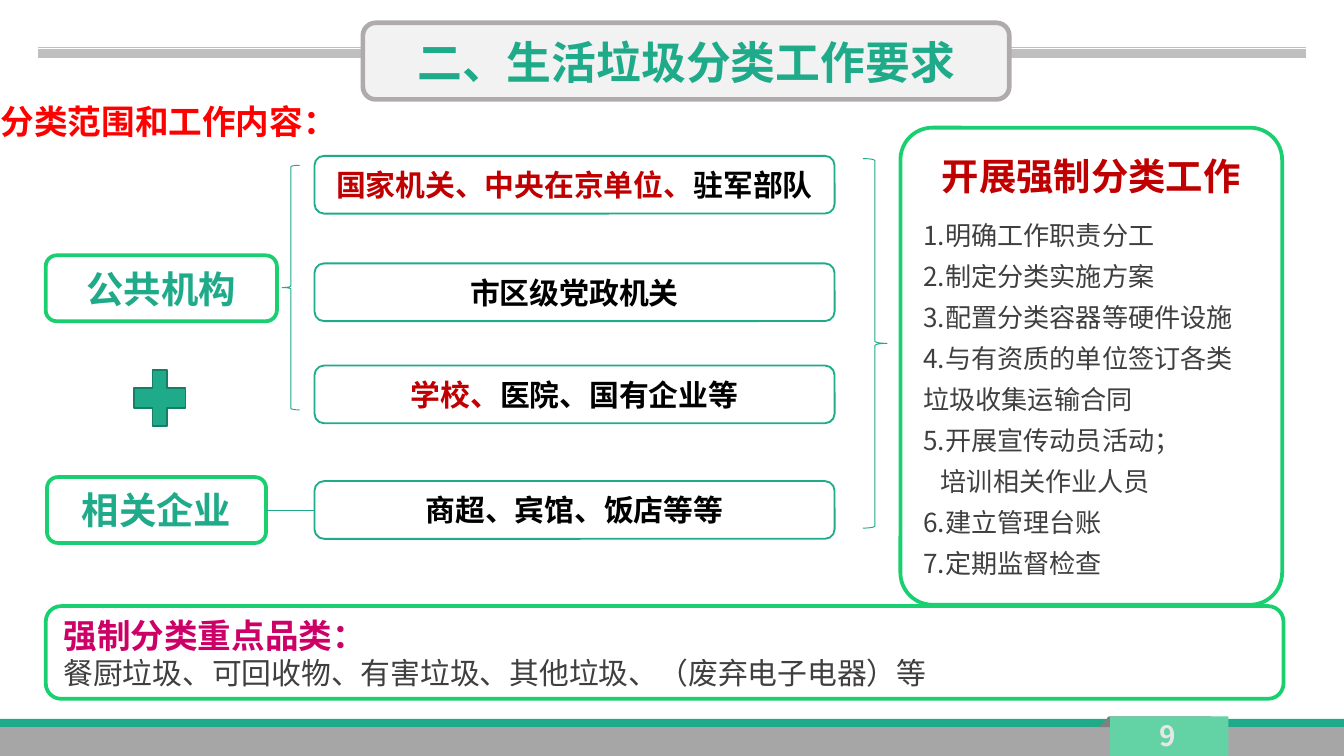
from dataclasses import dataclass

from pptx import Presentation
from pptx.dml.color import RGBColor
from pptx.enum import shapes, text
from pptx.oxml.ns import qn
from pptx.util import Inches, Pt

MSO = shapes.MSO_SHAPE
CENTER, LEFT = text.PP_ALIGN.CENTER, text.PP_ALIGN.LEFT


@dataclass(frozen=True)
class Theme:
    font: str = "Noto Sans CJK SC"
    teal: str = "1FAA89"
    teal_dark: str = "177E65"
    green: str = "1ACF6F"
    mint: str = "63D2A4"
    white: str = "FFFFFF"
    black: str = "000000"
    body: str = "403E3E"
    crimson: str = "C00000"
    red: str = "FF0000"
    magenta: str = "CC0066"
    title_fill: str = "F2F2F2"
    title_line: str = "AFABAB"
    footer: str = "A6A6A6"
    fold: str = "808080"
    rule: str = "BFBFBF"
    number: str = "E7E6E6"
    title_size: int = 24
    label_size: int = 20
    heading_size: int = 18
    text_size: int = 16
    number_size: int = 15
    list_size: int = 14


T = Theme()


def rgb(value):
    return RGBColor.from_string(value)


def paint(sp, fill=None, line=None, width=1):
    if fill:
        sp.fill.solid()
        sp.fill.fore_color.rgb = rgb(fill)
    else:
        sp.fill.background()
    if line:
        sp.line.color.rgb = rgb(line)
        sp.line.width = Pt(width)
    else:
        sp.line.fill.background()


def add_shape(s, kind, box, **style):
    sp = s.shapes.add_shape(kind, *map(Inches, box))
    sp.shadow.inherit = False
    paint(sp, **style)
    return sp


def add_line(s, start, end, color, width):
    line = s.shapes.add_connector(
        shapes.MSO_CONNECTOR.STRAIGHT, *map(Inches, (*start, *end)))
    line.line.color.rgb = rgb(color)
    line.line.width = Pt(width)
    line._element.spPr.append(line._element.makeelement(qn("a:effectLst"), {}))
    return line


def add_text(p, content, size, color, bold=True):
    r = p.add_run()
    r.text = content
    for name, value in dict(name=T.font, size=Pt(size), bold=bold).items():
        setattr(r.font, name, value)
    r.font.color.rgb = rgb(color)
    r.font._element.append(
        r.font._element.makeelement(qn("a:ea"), {"typeface": T.font}))


def write(sp, *runs, align=CENTER):
    """Put (text, size, colour) runs in the first paragraph, in the middle."""
    tf = sp.text_frame
    tf.vertical_anchor = text.MSO_ANCHOR.MIDDLE
    p = tf.paragraphs[0]
    p.alignment = align
    for run in runs:
        add_text(p, *run)
    return tf


def place(s, sp, box):
    """Move a placeholder into the box and to the front."""
    for name, value in zip(("left", "top", "width", "height"), box):
        setattr(sp, name, Inches(value))
    sp.text_frame.auto_size = text.MSO_AUTO_SIZE.NONE
    s.shapes._spTree.append(sp._element)


def round_corners(sp, adjust):
    spPr = sp._element.spPr
    geom = spPr.makeelement(qn("a:prstGeom"), {"prst": "roundRect"})
    guides = geom.makeelement(qn("a:avLst"), {})
    guides.append(guides.makeelement(
        qn("a:gd"), {"name": "adj", "fmla": f"val {round(adjust * 100000)}"}))
    geom.append(guides)
    spPr.append(geom)


def header_rules(s, box):
    x, y, w, _ = box
    length = 3.63
    for dy, width in ((0, 0.5), (0.05, 4.5)):
        for x1 in (x, x + w - length):
            add_line(s, (x1, y + dy), (x1 + length, y + dy), T.rule, width)


def footer(s, box, number):
    x, y, w, h = box
    add_shape(s, MSO.RECTANGLE, box, fill=T.teal)
    add_shape(s, MSO.RECTANGLE, (x, y + 0.06, w, h - 0.06), fill=T.footer)
    tab_x, tab_y = x + 8.26, y - 0.02
    outline = [(tab_x - 0.01, tab_y), (tab_x + 0.75, tab_y),
               (tab_x + 0.76, tab_y + 0.09), (tab_x - 0.08, tab_y + 0.08)]
    points = [(Inches(px), Inches(py)) for px, py in outline]
    builder = s.shapes.build_freeform(*points[0])
    builder.add_line_segments(points[1:], close=True)
    fold = builder.convert_to_shape()
    fold.shadow.inherit = False
    paint(fold, fill=T.fold)
    add_shape(s, MSO.RECTANGLE, (tab_x, tab_y, 0.88, 0.32), fill=T.mint)
    sp = s.shapes.add_textbox(
        *map(Inches, (tab_x - 0.08, tab_y - 0.03, 1.02, 0.34)))
    sp.text_frame.word_wrap = True
    write(sp, (number, T.number_size, T.number))


def title_plate(s, box, title):
    add_shape(s, MSO.ROUNDED_RECTANGLE, box,
              fill=T.title_fill, line=T.title_line, width=2.5)
    sp = s.shapes.title
    place(s, sp, box)
    write(sp, (title, T.title_size, T.teal))


def section_heading(s, box, heading):
    sp = s.shapes.add_textbox(*map(Inches, box))
    sp.text_frame.word_wrap = False
    write(sp, (heading, T.heading_size, T.red))


def scope_diagram(s, box):
    x, y, _, _ = box
    groups = []
    for label, dx, dy, w in (("公共机构", 0, 0.74, 1.72),
                             ("相关企业", 0.01, 2.39, 1.63)):
        sp = add_shape(s, MSO.ROUNDED_RECTANGLE, (x + dx, y + dy, w, 0.49),
                       fill=T.white, line=T.green, width=2)
        write(sp, (label, T.label_size, T.teal))
        groups.append(sp)

    plus = add_shape(s, MSO.CROSS, (x + 0.66, y + 1.59, 0.38, 0.42),
                     fill=T.teal, line=T.teal_dark)
    plus.adjustments[0] = 0.354

    members = (
        (0, [("国家机关、中央在京单位、", T.crimson), ("驻军部队", T.black)]),
        (0.8, [("市区级党政机关", T.black)]),
        (1.56, [("学校、", T.crimson), ("医院、国有企业等", T.black)]),
        (2.42, [("商超、宾馆、饭店等等", T.black)]),
    )
    for dy, runs in members:
        member = add_shape(s, MSO.ROUNDED_RECTANGLE,
                           (x + 2, y + dy, 3.87, 0.43), line=T.teal)
        write(member, *[(words, T.text_size, color) for words, color in runs])

    link = add_line(s, (x + 1.64, y + 2.63), (x + 2, y + 2.63), T.teal, 0.5)
    link.begin_connect(groups[-1], 3)
    link.end_connect(member, 1)

    for kind, dx, dy, w, h in ((MSO.LEFT_BRACE, 1.76, 0.07, 0.13, 1.82),
                               (MSO.RIGHT_BRACE, 6.08, 0.02, 0.18, 2.75)):
        add_shape(s, kind, (x + dx, y + dy, w, h), line=T.teal, width=0.5)


def task_panel(s, box, heading, tasks):
    sp = s.placeholders[1]
    place(s, sp, box)
    round_corners(sp, 0.084)
    paint(sp, fill=T.white, line=T.green, width=2)
    tf = write(sp, (heading, T.label_size, T.crimson))
    tf.paragraphs[0].space_before = Pt(0)
    for i, (task, indent) in enumerate(tasks):
        p = tf.add_paragraph()
        layout = dict(alignment=LEFT, line_spacing=Pt(22),
                      space_before=Pt(0 if i else 6))
        for name, value in layout.items():
            setattr(p, name, value)
        add_text(p, task, T.list_size, T.body, False)
        p._p.get_or_add_pPr().set("marL", str(Inches(indent)))
    tf.paragraphs[0]._p.get_or_add_pPr().set("marL", "0")
    for p in tf.paragraphs:
        pPr = p._p.get_or_add_pPr()
        pPr.set("indent", "0")
        pPr.append(pPr.makeelement(qn("a:buNone"), {}))


def category_box(s, box, heading, categories):
    sp = add_shape(s, MSO.ROUNDED_RECTANGLE, box,
                   fill=T.white, line=T.green, width=2)
    tf = write(sp, (heading, T.heading_size, T.magenta), align=LEFT)
    p = tf.add_paragraph()
    p.alignment = LEFT
    add_text(p, categories, T.text_size, T.body, False)


def main():
    prs = Presentation()
    prs.slide_width, prs.slide_height = Inches(10), Inches(5.625)
    s = prs.slides.add_slide(prs.slide_layouts[1])
    footer(s, (0, 5.35, 10, 0.3), "9")
    header_rules(s, (0.28, 0.35, 9.44, 0.05))
    scope_diagram(s, (0.34, 1.16, 6.26, 2.88))
    tasks = [("1.明确工作职责分工", 0), ("2.制定分类实施方案", 0),
             ("3.配置分类容器等硬件设施", 0),
             ("4.与有资质的单位签订各类垃圾收集运输合同", 0),
             ("5.开展宣传动员活动；", 0), ("培训相关作业人员", 0.13),
             ("6.建立管理台账", 0), ("7.定期监督检查", 0)]
    task_panel(s, (6.7, 0.95, 2.84, 3.55), "开展强制分类工作", tasks)
    category_box(s, (0.34, 4.51, 9.21, 0.69), "强制分类重点品类：",
                 "餐厨垃圾、可回收物、有害垃圾、其他垃圾、（废弃电子电器）等")
    section_heading(s, (-0.11, 0.7, 2.73, 0.4), "分类范围和工作内容：")
    title_plate(s, (2.7, 0.17, 4.81, 0.57), "二、生活垃圾分类工作要求")
    prs.save("out.pptx")


if __name__ == "__main__":
    main()
